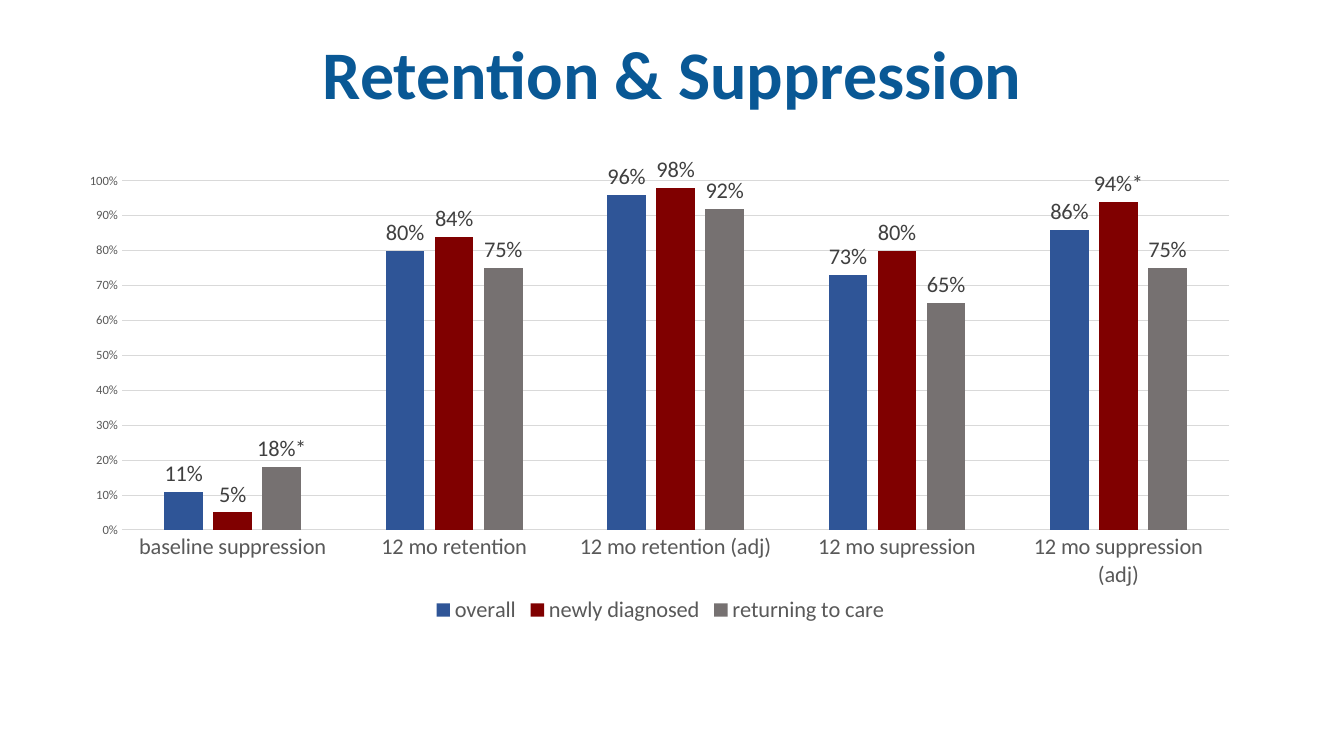
from lxml import etree
from pptx import Presentation
from pptx.chart.data import CategoryChartData
from pptx.dml.color import RGBColor
from pptx.enum.chart import XL_CHART_TYPE, XL_LABEL_POSITION, XL_LEGEND_POSITION, XL_TICK_MARK
from pptx.enum.text import MSO_ANCHOR, PP_ALIGN
from pptx.oxml.ns import qn
from pptx.util import Cm, Pt

COLUMNS = XL_CHART_TYPE.COLUMN_CLUSTERED
OUTSIDE = XL_LABEL_POSITION.OUTSIDE_END
BOTTOM = XL_LEGEND_POSITION.BOTTOM
NO_TICK = XL_TICK_MARK.NONE
MIDDLE = MSO_ANCHOR.MIDDLE
CENTER = PP_ALIGN.CENTER

TITLE_BLUE = RGBColor(0x09, 0x58, 0x95)
BLUE = RGBColor(0x2F, 0x55, 0x97)
MAROON = RGBColor(0x80, 0x00, 0x00)
GRAY = RGBColor(0x76, 0x71, 0x71)
GRID = RGBColor(0xD9, 0xD9, 0xD9)
AXIS_TEXT = RGBColor(0x59, 0x59, 0x59)
LABEL_TEXT = RGBColor(0x40, 0x40, 0x40)

CATEGORIES = ["baseline suppression", "12 mo retention", "12 mo retention (adj)",
              "12 mo supression", "12 mo suppression (adj)"]
SERIES = [
    ("overall", [0.11, 0.8, 0.96, 0.73, 0.86], BLUE, {}),
    ("newly diagnosed", [0.05, 0.84, 0.98, 0.8, 0.94], MAROON, {4: "94%*"}),
    ("returning to care", [0.18, 0.75, 0.92, 0.65, 0.75], GRAY, {0: "18%*"}),
]
PLOT_LAYOUT = {"layoutTarget": "inner", "xMode": "edge", "yMode": "edge",
               "x": 0.042, "y": 0.052, "w": 0.942, "h": 0.74}


class SlideBuilder:
    """Draws styled elements on the current slide."""

    font_name = "Calibri"

    def __init__(self, slide):
        self.s = slide

    def style(self, font, size, color, bold=False):
        values = {"name": self.font_name, "size": Pt(size), "bold": bold}
        for key, value in values.items():
            setattr(font, key, value)
        font.color.rgb = color

    def rule(self, line):
        line.color.rgb = GRID
        line.width = Pt(0.75)

    def title(self, text, box):
        tf = self.s.shapes.add_textbox(*map(Cm, box)).text_frame
        for key, value in {"word_wrap": True, "vertical_anchor": MIDDLE}.items():
            setattr(tf, key, value)
        p = tf.paragraphs[0]
        p.alignment = CENTER
        p.line_spacing = 0.9
        r = p.add_run()
        r.text = text
        self.style(r.font, 48.6, TITLE_BLUE, True)

    def column_chart(self, box):
        data = CategoryChartData(number_format="0%")
        data.categories = CATEGORIES
        for name, values, _, _ in SERIES:
            data.add_series(name, values)
        chart = self.s.shapes.add_chart(COLUMNS, *map(Cm, box), data).chart
        chart.has_title = False
        chart.font.name = self.font_name
        chart.font.size = Pt(10)
        plot = chart.plots[0]
        for key, value in {"gap_width": 219, "overlap": -27, "vary_by_categories": False}.items():
            setattr(plot, key, value)
        self.place_plot(chart)
        self.axes(chart)
        self.legend(chart)
        for series, (_, _, color, notes) in zip(plot.series, SERIES):
            self.series(series, color, notes)

    def place_plot(self, chart):
        area = chart.element.find(".//" + qn("c:plotArea"))
        for old in area.findall(qn("c:layout")):
            area.remove(old)
        layout = etree.Element(qn("c:layout"))
        manual = etree.SubElement(layout, qn("c:manualLayout"))
        for key, value in PLOT_LAYOUT.items():
            etree.SubElement(manual, qn("c:" + key), val=str(value))
        area.insert(0, layout)

    def axes(self, chart):
        cat, val = chart.category_axis, chart.value_axis
        for axis, size in ((cat, 16), (val, 9)):
            axis.major_tick_mark = axis.minor_tick_mark = NO_TICK
            self.style(axis.tick_labels.font, size, AXIS_TEXT)
        self.rule(cat.format.line)
        val.format.line.fill.background()
        scale = {"minimum_scale": 0, "maximum_scale": 1, "major_unit": 0.1,
                 "has_major_gridlines": True}
        for key, value in scale.items():
            setattr(val, key, value)
        self.rule(val.major_gridlines.format.line)
        val.tick_labels.number_format = "0%"
        val.tick_labels.number_format_is_linked = False

    def legend(self, chart):
        chart.has_legend = True
        chart.legend.position = BOTTOM
        chart.legend.include_in_layout = False
        self.style(chart.legend.font, 16, AXIS_TEXT)

    def series(self, series, color, notes):
        series.format.fill.solid()
        series.format.fill.fore_color.rgb = color
        series.invert_if_negative = False
        labels = series.data_labels
        values = {"show_value": True, "number_format": "0%",
                  "number_format_is_linked": False, "position": OUTSIDE}
        for key, value in values.items():
            setattr(labels, key, value)
        self.style(labels.font, 16, LABEL_TEXT)
        for index, text in notes.items():
            label = series.points[index].data_label
            r = label.text_frame.paragraphs[0].add_run()
            r.text = text
            self.style(r.font, 16, LABEL_TEXT)
            label.position = OUTSIDE


def main():
    prs = Presentation()
    prs.slide_width, prs.slide_height = Cm(33.87), Cm(19.05)
    builder = SlideBuilder(prs.slides.add_slide(prs.slide_layouts[6]))
    builder.title("Retention & Suppression", (2.34, 0.79, 29.21, 2.31))
    builder.column_chart((1.83, 3.94, 29.62, 11.89))
    prs.save("out.pptx")


if __name__ == "__main__":
    main()
